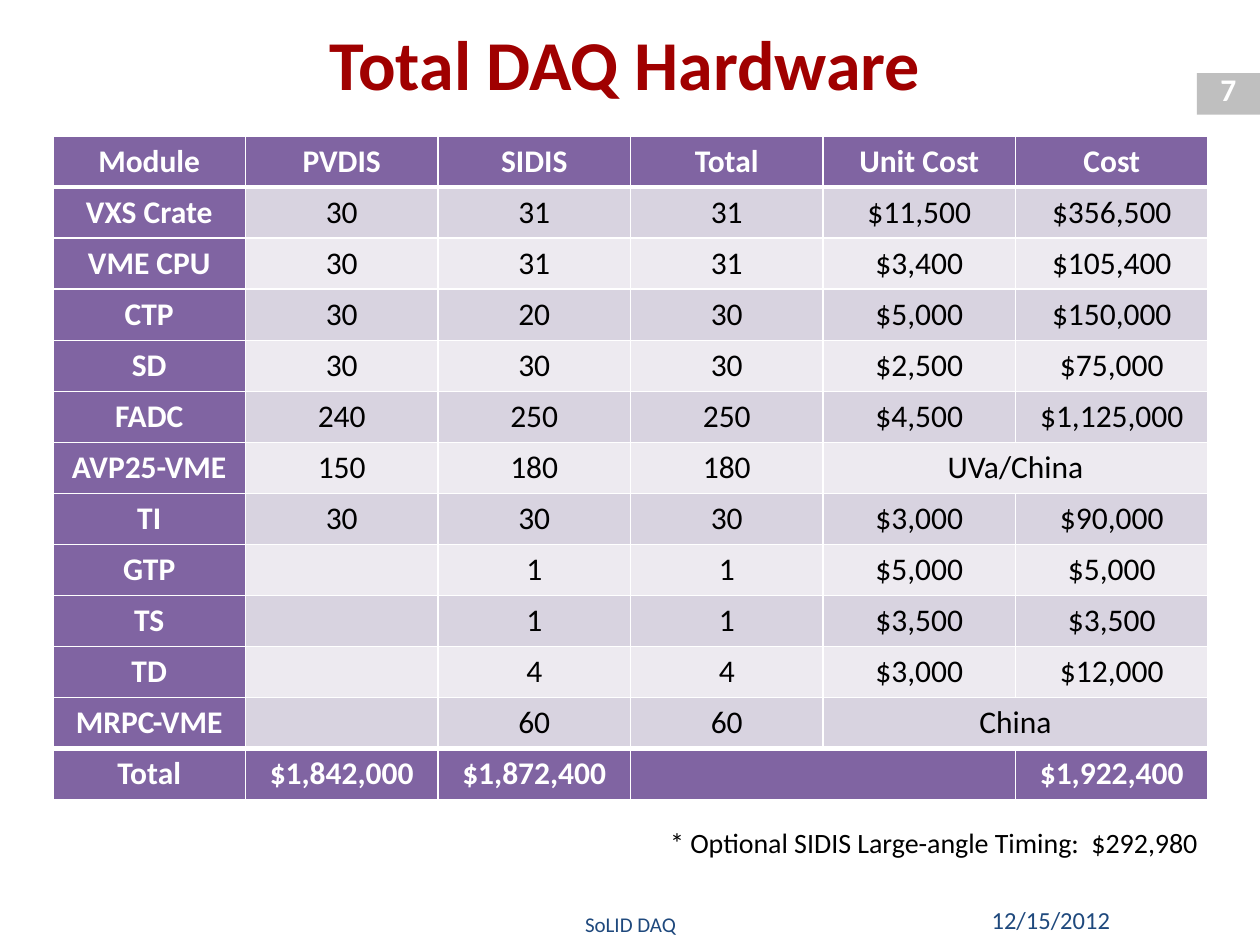
import dataclasses

import pptx
import pptx.dml.color
import pptx.enum.shapes
import pptx.enum.text
import pptx.oxml
import pptx.oxml.ns
import pptx.util

Inches = pptx.util.Inches
Align = pptx.enum.text.PP_ALIGN
Anchor = pptx.enum.text.MSO_ANCHOR


@dataclasses.dataclass(frozen=True)
class Theme:
    font: str = "Calibri"
    heading: str = "A00000"
    purple: str = "8064A2"
    bands: tuple = ("D8D3E0", "EDEAF0")
    white: str = "FFFFFF"
    black: str = "000000"
    navy: str = "1F497D"
    gray: str = "BFBFBF"
    title_size: int = 40
    table_size: int = 18
    note_size: int = 16
    date_size: int = 14
    footer_size: int = 12
    thin_rule: int = 1
    thick_rule: int = 3


def rgb(color):
    return pptx.dml.color.RGBColor.from_string(color)


class SlideBuilder:
    def __init__(self, slide, theme):
        self.slide = slide
        self.theme = theme

    def styled_run(self, frame, text, size, color, align, bold=False):
        paragraph = frame.paragraphs[0]
        paragraph.alignment = align
        run = paragraph.add_run()
        run.text = text
        run.font.name = self.theme.font
        run.font.size = pptx.util.Pt(size)
        run.font.bold = bold
        run.font.color.rgb = rgb(color)

    def title(self, text, left, top, width, height):
        heading = self.slide.shapes.title
        heading.left, heading.top = Inches(left), Inches(top)
        heading.width, heading.height = Inches(width), Inches(height)
        heading.text_frame.vertical_anchor = Anchor.MIDDLE
        self.styled_run(heading.text_frame, text, self.theme.title_size,
                        self.theme.heading, Align.CENTER, True)

    def block(self, color, left, top, width, height):
        block = self.slide.shapes.add_shape(
            pptx.enum.shapes.MSO_SHAPE.RECTANGLE,
            Inches(left), Inches(top), Inches(width), Inches(height))
        block.shadow.inherit = False
        block.fill.solid()
        block.fill.fore_color.rgb = rgb(color)
        block.line.fill.background()

    def text(self, text, left, top, width, height, size, color, align,
             bold=False, anchor=Anchor.TOP, wrap=True):
        frame = self.slide.shapes.add_textbox(
            Inches(left), Inches(top), Inches(width), Inches(height)).text_frame
        frame.word_wrap = wrap
        frame.vertical_anchor = anchor
        self.styled_run(frame, text, size, color, align, bold)

    def border(self, cell, side, points):
        properties = cell._tc.get_or_add_tcPr()
        properties.append(pptx.oxml.parse_xml(
            f'<a:ln{side} {pptx.oxml.ns.nsdecls("a")} w="{pptx.util.Pt(points)}">'
            f'<a:solidFill><a:srgbClr val="{self.theme.white}"/></a:solidFill>'
            f'</a:ln{side}>'))

    def cell(self, cell, text, fill, emphasized, thick_sides):
        theme = self.theme
        for side in "LRTB":
            self.border(cell, side, theme.thick_rule if side in thick_sides
                        else theme.thin_rule)
        cell.fill.solid()
        cell.fill.fore_color.rgb = rgb(fill)
        cell.vertical_anchor = Anchor.MIDDLE
        if text:
            self.styled_run(cell.text_frame, text, theme.table_size,
                            theme.white if emphasized else theme.black,
                            Align.CENTER, emphasized)

    def table(self, rows, merges, left, top, width, height):
        table = self.slide.shapes.add_table(
            len(rows), len(rows[0]), Inches(left), Inches(top),
            Inches(width), Inches(height)).table
        last = len(rows) - 1
        thick_sides = {0: "B", 1: "T", last - 1: "B", last: "T"}
        for r, values in enumerate(rows):
            for c, value in enumerate(values):
                emphasized = r in (0, last) or c == 0
                fill = self.theme.purple if emphasized else self.theme.bands[(r - 1) % 2]
                self.cell(table.cell(r, c), value, fill, emphasized,
                          thick_sides.get(r, ""))
        for r, c in merges:
            table.cell(r, c).merge(table.cell(r, c + 1))


def main():
    hardware = [
        ("Module", "PVDIS", "SIDIS", "Total", "Unit Cost", "Cost"),
        ("VXS Crate", "30", "31", "31", "$11,500", "$356,500"),
        ("VME CPU", "30", "31", "31", "$3,400", "$105,400"),
        ("CTP", "30", "20", "30", "$5,000", "$150,000"),
        ("SD", "30", "30", "30", "$2,500", "$75,000"),
        ("FADC", "240", "250", "250", "$4,500", "$1,125,000"),
        ("AVP25-VME", "150", "180", "180", "UVa/China", ""),
        ("TI", "30", "30", "30", "$3,000", "$90,000"),
        ("GTP", "", "1", "1", "$5,000", "$5,000"),
        ("TS", "", "1", "1", "$3,500", "$3,500"),
        ("TD", "", "4", "4", "$3,000", "$12,000"),
        ("MRPC-VME", "", "60", "60", "China", ""),
        ("Total", "$1,842,000", "$1,872,400", "", "", "$1,922,400"),
    ]
    merged_pairs = [(6, 4), (11, 4), (12, 3)]

    deck = pptx.Presentation()
    deck.slide_width, deck.slide_height = Inches(10), Inches(7.5)
    theme = Theme()
    builder = SlideBuilder(deck.slides.add_slide(deck.slide_layouts[5]), theme)

    builder.block(theme.gray, 9.5, 0.58, 0.5, 0.33)
    builder.text("7", 9.5, 0.51, 0.5, 0.4, theme.table_size, theme.white,
                 Align.CENTER, bold=True)
    builder.title("Total DAQ Hardware", 0.42, 0.08, 9.08, 0.83)
    builder.table(hardware, merged_pairs, 0.42, 1.08, 9.17, 5.27)
    builder.text("12/15/2012", 7.58, 7.1, 1.33, 0.4, theme.date_size,
                 theme.navy, Align.RIGHT, anchor=Anchor.MIDDLE)
    builder.text("SoLID DAQ", 2.42, 7.17, 5.17, 0.33, theme.footer_size,
                 theme.navy, Align.CENTER, anchor=Anchor.MIDDLE)
    builder.text("* Optional SIDIS Large-angle Timing:  $292,980",
                 5.22, 6.5, 4.44, 0.37, theme.note_size, theme.black,
                 Align.LEFT, wrap=False)
    deck.save("out.pptx")


if __name__ == "__main__":
    main()
